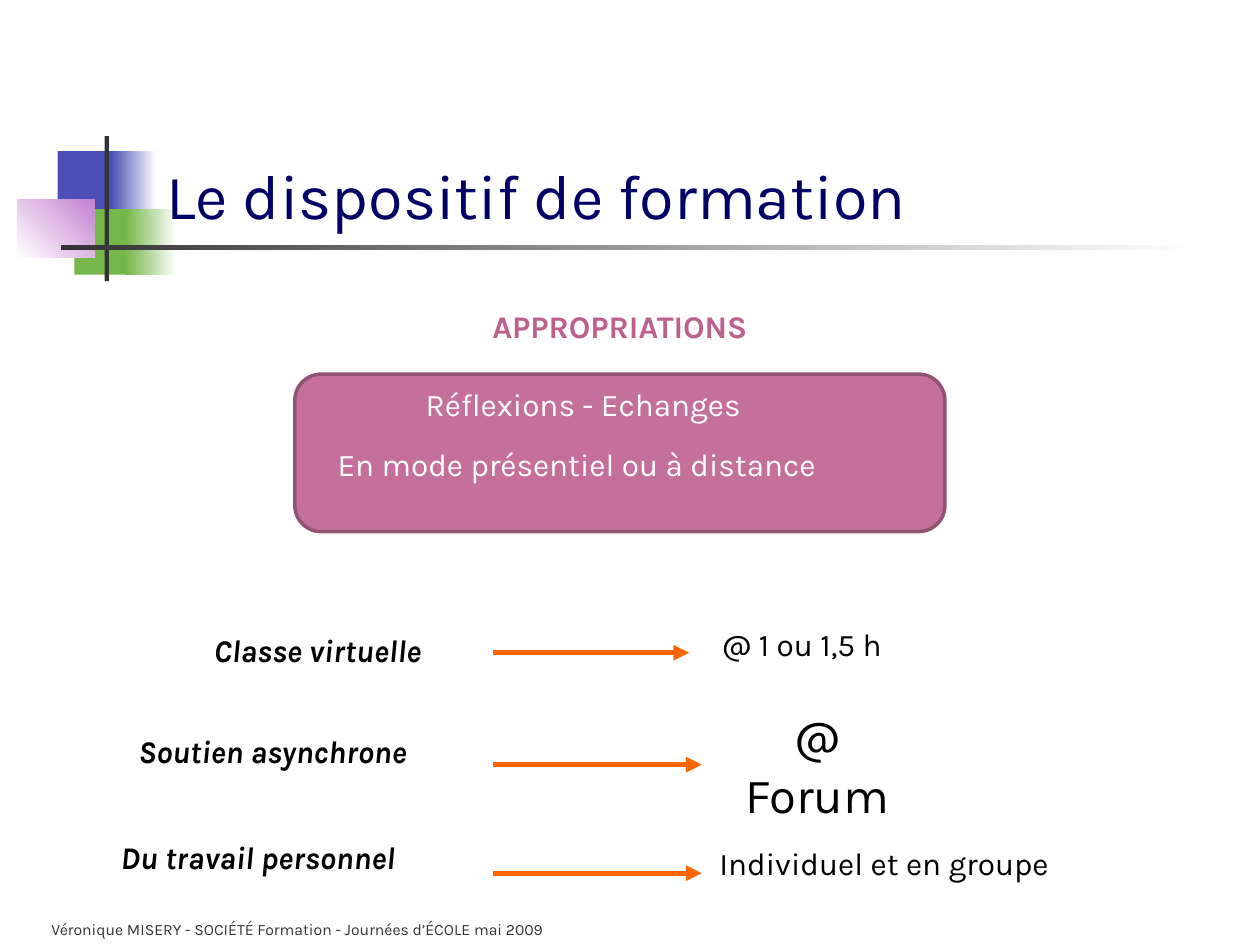
"""Builds the slide "Le dispositif de formation"."""
from pptx import Presentation
from pptx.dml.color import RGBColor
from pptx.enum import shapes, text
from pptx.oxml import ns, xmlchemy
from pptx.util import Pt

BLUE = RGBColor(0x4B, 0x4E, 0xB5)
GREEN = RGBColor(0x76, 0xB7, 0x49)
LILAC = RGBColor(0xC4, 0x81, 0xCF)
GREY = RGBColor(0x33, 0x33, 0x33)
WHITE = RGBColor(0xFF, 0xFF, 0xFF)
BLACK = RGBColor(0, 0, 0)
NAVY = RGBColor(0, 0, 0x66)
PINK = RGBColor(0xC4, 0x70, 0x9A)
PLUM = RGBColor(0x91, 0x53, 0x72)
ROSE = RGBColor(0xBD, 0x61, 0x8C)
ORANGE = RGBColor(0xFF, 0x66, 0)
TOP, MIDDLE, BOTTOM = text.MSO_ANCHOR.TOP, text.MSO_ANCHOR.MIDDLE, text.MSO_ANCHOR.BOTTOM
LEFT, CENTER = text.PP_ALIGN.LEFT, text.PP_ALIGN.CENTER

deck = Presentation()
deck.slide_width, deck.slide_height = Pt(720), Pt(540)
slide = deck.slides.add_slide(deck.slide_layouts[6])


def add_block(x, y, w, h, start, end=None, angle=0, kind=shapes.MSO_SHAPE.RECTANGLE):
    block = slide.shapes.add_shape(kind, Pt(x), Pt(y), Pt(w), Pt(h))
    block.shadow.inherit = False
    block.line.fill.background()
    if end is None:
        block.fill.solid()
        block.fill.fore_color.rgb = start
    else:
        block.fill.gradient()
        block.fill.gradient_angle = angle
        for stop, color in zip(block.fill.gradient_stops, (start, end)):
            stop.color.rgb = color
    return block


def add_label(words, x, y, w, h, size=18, color=BLACK, anchor=TOP, align=LEFT, bold=False, italic=False):
    frame = slide.shapes.add_textbox(Pt(x), Pt(y), Pt(w), Pt(h)).text_frame
    frame.word_wrap = True
    frame.vertical_anchor = anchor
    frame.text = words
    for paragraph in frame.paragraphs:
        paragraph.alignment = align
        for run in paragraph.runs:
            run.font.name = "Karla"
            run.font.size = Pt(size)
            run.font.color.rgb = color
            run.font.bold = bold
            run.font.italic = italic


add_block(33, 86.4, 34.6, 37.4, BLUE)
add_block(63.4, 86.4, 26, 37.4, BLUE, WHITE)
add_block(42.5, 119.5, 33.1, 37.4, GREEN)
add_block(72, 119.5, 28.8, 37.4, GREEN, WHITE)
add_block(10, 113.8, 44, 33.1, WHITE, LILAC, 45)
add_block(59.8, 77.8, 2.5, 82.8, GREY)
add_block(34.6, 140.2, 648, 2.5, GREY, WHITE)

add_label("Le dispositif de formation", 87.8, 87.1, 666, 48.2, 36, NAVY, MIDDLE)
add_label("APPROPRIATIONS", 166, 172, 376.6, 36, color=ROSE, align=CENTER, bold=True)

panel = add_block(168.5, 213.8, 371.5, 90, PINK, kind=shapes.MSO_SHAPE.ROUNDED_RECTANGLE)
panel.line.color.rgb = PLUM
panel.line.width = Pt(2)
add_label("Réflexions - Echanges", 236.2, 216.7, 232.6, 36, color=WHITE)
add_label("En mode présentiel ou à distance", 185.8, 250.6, 338.4, 36, color=WHITE)

activities = [
    ("Classe virtuelle", 115.2, 357.1, 172),
    ("Soutien asynchrone", 72, 414.7, 219),
    ("Du travail personnel", 61.9, 475.2, 230.4),
]
for activity, x, y, w in activities:
    add_label(activity, x, y, w, 36, bold=True, italic=True)

add_label("@ 1 ou 1,5 h", 405.4, 353.5, 119.5, 28.8)
add_label("@\nForum", 405.4, 401, 123.1, 72, 28, anchor=MIDDLE, align=CENTER)
add_label("Individuel et en groupe", 404, 475.2, 282.2, 36, anchor=MIDDLE)

for y, tip in [(373, 393.8), (437, 401), (499, 401)]:
    arrow = slide.shapes.add_connector(
        shapes.MSO_CONNECTOR.STRAIGHT, Pt(281.5), Pt(y), Pt(tip), Pt(y))
    arrow.line.color.rgb = ORANGE
    arrow.line.width = Pt(3)
    head = xmlchemy.OxmlElement("a:tailEnd")
    head.set("type", "triangle")
    properties = arrow.element.find(ns.qn("p:spPr"))
    properties.find(ns.qn("a:ln")).append(head)
    properties.append(xmlchemy.OxmlElement("a:effectLst"))

add_label("Véronique MISERY - SOCIÉTÉ Formation - Journées d’ÉCOLE mai 2009",
          22.3, 519.8, 320.4, 20.2, 9, GREY, BOTTOM)

deck.save("out.pptx")
